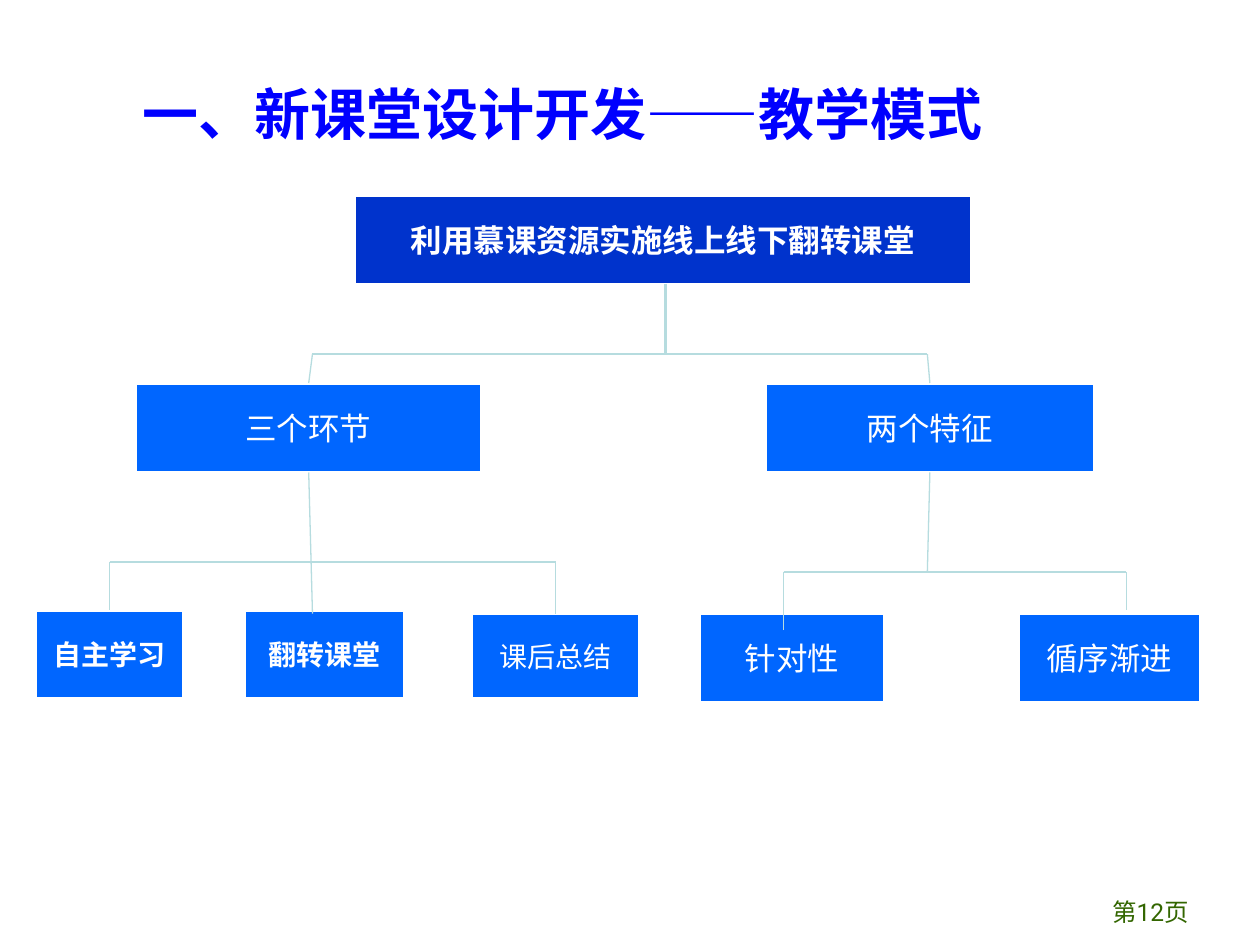
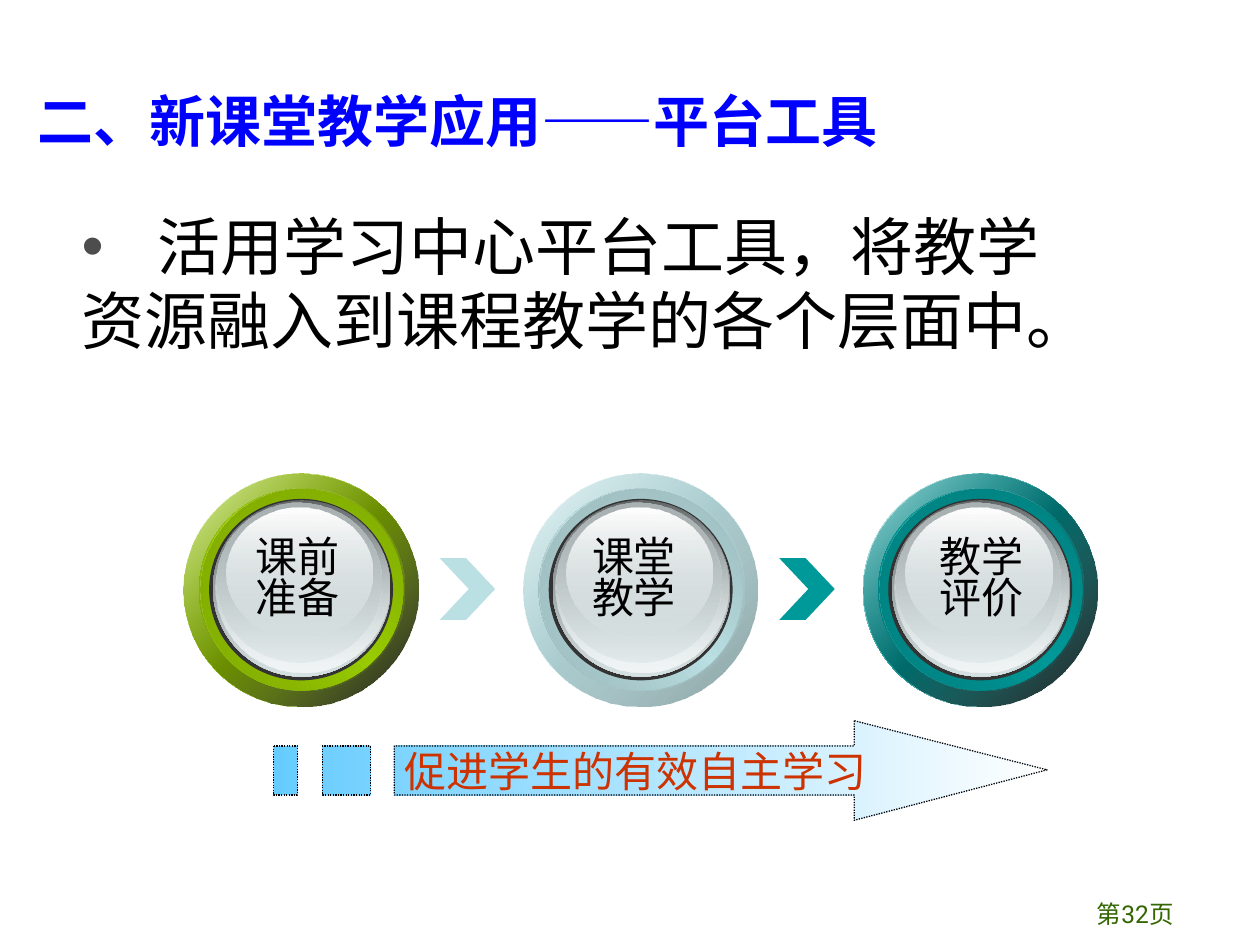
from dataclasses import dataclass
from typing import Any

from lxml import etree
from pptx import Presentation
from pptx.dml.color import RGBColor
from pptx.enum.dml import MSO_LINE
from pptx.enum.shapes import MSO_CONNECTOR, MSO_SHAPE
from pptx.enum.text import MSO_ANCHOR as Anchor, PP_ALIGN as Align
from pptx.oxml import parse_xml
from pptx.oxml.ns import nsdecls, qn
from pptx.util import Emu, Inches, Pt

COLORS = {
    "title": "0000FF", "page": "336600", "root": "0033CC", "node": "0066FF",
    "white": "FFFFFF", "black": "000000", "link": "B6DCDF", "bullet": "4D4D4D",
    "dark": "333333", "glass": "D6E1E2", "sky": "66CCFF", "slogan": "CC3300",
}
CJK = "Noto Sans CJK SC"
COLUMNS, ROWS = 100, 75


@dataclass
class Deck:
    presentation: Any
    slide: Any = None

    def x(self, columns):
        return Emu(round(self.presentation.slide_width * columns / COLUMNS))

    def y(self, rows):
        return Emu(round(self.presentation.slide_height * rows / ROWS))

    def area(self, left, top, width, height):
        return self.x(left), self.y(top), self.x(width), self.y(height)

    def start(self, title, title_area, page, page_area):
        layout = self.presentation.slide_layouts[6]
        self.slide = self.presentation.slides.add_slide(layout)
        self.text(title, title_area, 32, COLORS["title"], bold=True, anchor=Anchor.MIDDLE)
        self.text(page, page_area, 14, COLORS["page"], font="Roboto",
                  anchor=Anchor.BOTTOM, align=Align.CENTER)

    def label(self, shape, text, size, color, font=CJK, bold=False,
              anchor=Anchor.TOP, align=Align.LEFT, spacing=None, wrap=True):
        frame = shape.text_frame
        frame.text = text
        frame.word_wrap = wrap
        frame.vertical_anchor = anchor
        for paragraph in frame.paragraphs:
            paragraph.alignment = align
            if spacing:
                paragraph.line_spacing = spacing
            for run in paragraph.runs:
                run.font.size, run.font.bold, run.font.name = Pt(size), bold, font
                run.font.color.rgb = RGBColor.from_string(color)
                east_asian = etree.SubElement(run.font._element, qn("a:ea"))
                east_asian.set("typeface", CJK)
        return frame

    def text(self, text, area, size, color, **style):
        box = self.slide.shapes.add_textbox(*self.area(*area))
        return self.label(box, text, size, color, **style)

    def shape(self, kind, area, fill):
        shape = self.slide.shapes.add_shape(kind, *self.area(*area))
        shape.shadow.inherit = False
        shape.line.fill.background()
        self.paint(shape, fill)
        return shape

    def paint(self, shape, fill):
        if isinstance(fill, str):
            shape.fill.solid()
            shape.fill.fore_color.rgb = RGBColor.from_string(fill)
            return
        angle, *stops = fill
        marks = "".join(
            f'<a:gs pos="{position * 1000}"><a:srgbClr val="{color}">'
            f'<a:alpha val="{opacity * 1000}"/></a:srgbClr></a:gs>'
            for position, color, opacity in stops)
        gradient = parse_xml(
            f'<a:gradFill {nsdecls("a")} rotWithShape="1"><a:gsLst>{marks}</a:gsLst>'
            f'<a:lin ang="{angle * 60000}" scaled="1"/></a:gradFill>')
        shape.fill.background()
        properties = shape._element.spPr
        properties.replace(properties.find(qn("a:noFill")), gradient)

    def node(self, text, area, size, bold=False, fill=COLORS["node"]):
        box = self.shape(MSO_SHAPE.RECTANGLE, area, fill)
        box.line.color.rgb = RGBColor.from_string(COLORS["white"])
        box.line.width = Pt(2)
        self.label(box, text, size, COLORS["white"], bold=bold,
                   anchor=Anchor.MIDDLE, align=Align.CENTER)

    def route(self, points, width=0.75):
        for begin, end in zip(points, points[1:]):
            line = self.slide.shapes.add_connector(
                MSO_CONNECTOR.STRAIGHT, self.x(begin[0]), self.y(begin[1]),
                self.x(end[0]), self.y(end[1]))
            line.line.color.rgb = RGBColor.from_string(COLORS["link"])
            line.line.width = Pt(width)
            etree.SubElement(line._element.spPr, qn("a:effectLst"))

    def bullets(self, first, rest, area, size):
        frame = self.text(f"{first}\n{rest}", area, size, COLORS["black"], spacing=0.87)
        lead, following = frame.paragraphs
        following.space_before = Pt(5)
        properties = lead._p.get_or_add_pPr()
        properties.set("marL", str(Inches(0.6)))
        properties.set("indent", str(-Inches(0.6)))
        color = etree.SubElement(properties, qn("a:buClr"))
        etree.SubElement(color, qn("a:srgbClr")).set("val", COLORS["bullet"])
        etree.SubElement(properties, qn("a:buFont")).set("typeface", "Arial")
        etree.SubElement(properties, qn("a:buChar")).set("char", "•")

    def button(self, left, top, base, edge, veil, rim, rim_opacity):
        glass, white = COLORS["glass"], COLORS["white"]
        layers = [
            (0, 0, 18.6, 18.5, (45, (0, white, 100), (50, base, 100), (100, white, 100))),
            (0, 0, 18.6, 18.5, (45, (0, base, 32), (100, rim, rim_opacity))),
            (1.2, 1.2, 16.2, 16, (315, (0, edge, 100), (50, base, 100), (100, edge, 100))),
            (1.3, 1.2, 16.2, 16, (45, (0, veil, 100), (100, base, 0))),
            (2, 2, 14.6, 14.4, COLORS["dark"]),
            (2.3, 2.1, 14.1, 14, (90, (0, "636869", 100), (100, glass, 100))),
            (2.5, 2.2, 13.8, 13.6, (90, (0, glass, 0), (100, "F1F5F5", 100))),
            (2.6, 2.3, 13.1, 12.7, (90, (0, "AAB2B3", 100), (100, glass, 48))),
            (3.4, 2.7, 11.6, 10.3, (90, (0, white, 100), (100, glass, 38))),
        ]
        for dx, dy, width, height, fill in layers:
            self.shape(MSO_SHAPE.OVAL, (left + dx, top + dy, width, height), fill)

    def outline(self, contours, fill):
        scaled = [[(self.x(x), self.y(y)) for x, y in points] for points in contours]
        builder = self.slide.shapes.build_freeform(*scaled[0][0])
        builder.add_line_segments(scaled[0][1:], close=True)
        for points in scaled[1:]:
            builder.move_to(*points[0])
            builder.add_line_segments(points[1:], close=True)
        shape = builder.convert_to_shape()
        shape.shadow.inherit = False
        self.paint(shape, fill)
        shape.line.color.rgb = RGBColor.from_string(COLORS["black"])
        shape.line.width = Pt(0.75)
        shape.line.dash_style = MSO_LINE.ROUND_DOT
        return shape


def teaching_model(deck):
    deck.start("一、新课堂设计开发——教学模式", (10.3, 2.4, 75.8, 13.1),
               "第12页", (84.2, 69, 14.2, 5))
    deck.node("利用慕课资源实施线上线下翻转课堂", (28.1, 15.5, 49, 7.1), 18, True, COLORS["root"])
    for text, left, top, width, height, size, bold in [
        ("三个环节", 10.7, 30.4, 27.5, 7.1, 18, False),
        ("两个特征", 60.7, 30.4, 26.2, 7.1, 18, False),
        ("自主学习", 2.8, 48.4, 11.8, 7.1, 16, True),
        ("翻转课堂", 19.4, 48.4, 12.7, 7.1, 16, True),
        ("课后总结", 37.4, 48.7, 13.4, 6.8, 16, False),
        ("针对性", 55.5, 48.7, 14.7, 7.1, 18, False),
        ("循序渐进", 80.8, 48.7, 14.5, 7.1, 18, False),
    ]:
        deck.node(text, (left, top, width, height), size, bold)
    deck.route([(52.8, 22.5), (52.8, 28.1)], 1.5)
    for points in [
        [(24.5, 30.4), (24.8, 28.1), (73.6, 28.1), (73.8, 30.4)],
        [(24.5, 37.5), (24.8, 48.7)],
        [(8.7, 48.4), (8.7, 44.6), (44.1, 44.6), (44.1, 48.7)],
        [(73.8, 37.5), (73.6, 45.4)],
        [(62.2, 50), (62.2, 45.4), (89.4, 45.4), (89.4, 48.4)],
    ]:
        deck.route(points)


def platform_tools(deck):
    deck.start("二、新课堂教学应用——平台工具", (2, 6.4, 85.1, 6.3),
               "第32页", (84.2, 69.2, 11.8, 5))
    deck.bullets("活用学习中心平台工具，将教学", "资源融入到课程教学的各个层面中。",
                 (5.5, 16.8, 85, 13.4), 36)

    first, step, top = 14.6, 26.95, 37.6
    for index, color in enumerate(["BBE0E3", "009999"]):
        chevron = deck.shape(MSO_SHAPE.CHEVRON,
                             (first + index * step + 20.3, 44.3, 4.4, 4.9), color)
        chevron.adjustments[0] = 0.525
    stages = [
        ("课前\n准备", 19.3, ("99CC00", "759C00", "7EA700", COLORS["black"], 90)),
        ("课堂\n教学", 46, ("BBE0E3", "8FACAE", "9AB8BA", "86A0A2", 100)),
        ("教学\n评价", 73.6, ("009999", "007575", "007E7E", COLORS["black"], 90)),
    ]
    for index, (stage, stage_left, shades) in enumerate(stages):
        deck.button(first + index * step, top, *shades)
        deck.text(stage, (stage_left, 42.3, 8.8, 9.1), 24, COLORS["black"],
                  font="Arial", spacing=0.82, wrap=False)

    upper, lower = 59.2, 63.1
    arrow = [(67.8, 57.2), (67.8, upper), (31.3, upper), (31.3, lower),
             (67.8, lower), (67.8, 65.1), (83.1, 61.1)]
    blocks = [[(left, upper), (left, lower), (right, lower), (right, upper)]
              for left, right in [(25.6, 29.4), (21.7, 23.6)]]
    progress = deck.outline([arrow, *blocks],
                            (0, (0, COLORS["sky"], 100), (100, COLORS["white"], 100)))
    frame = deck.label(progress, "促进学生的有效自主学习", 24, COLORS["slogan"],
                       font="Arial", anchor=Anchor.MIDDLE)
    frame.margin_left = deck.x(10.4)


def main():
    presentation = Presentation()
    presentation.slide_width, presentation.slide_height = Inches(10), Inches(7.5)
    deck = Deck(presentation)
    teaching_model(deck)
    platform_tools(deck)
    presentation.save("out.pptx")


if __name__ == "__main__":
    main()
